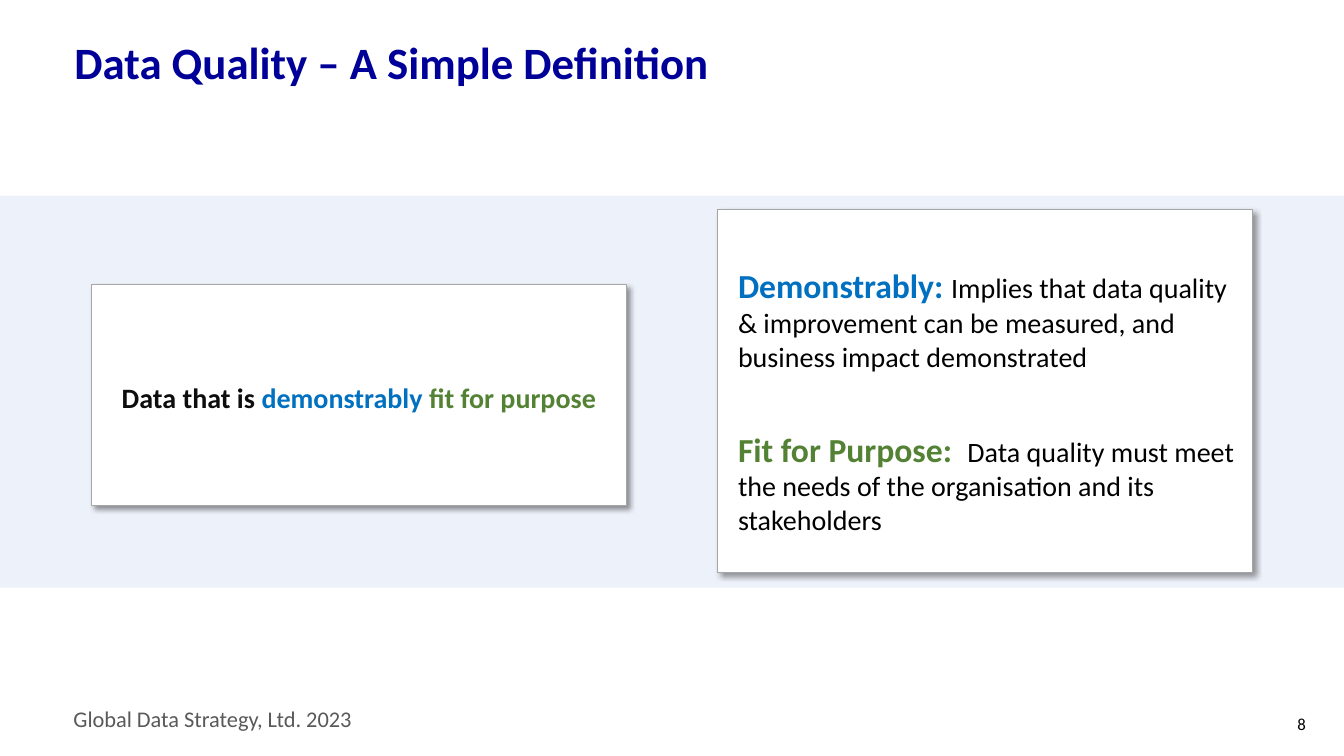
import lxml.etree
import pptx
import pptx.dml.color
import pptx.enum.shapes
import pptx.enum.text
import pptx.oxml.ns
import pptx.util

Inches = pptx.util.Inches
Pt = pptx.util.Pt
ALIGN = pptx.enum.text.PP_ALIGN
ANCHOR = pptx.enum.text.MSO_ANCHOR
RECTANGLE = pptx.enum.shapes.MSO_SHAPE.RECTANGLE
BLUE, GREEN, BLACK = "0070C0", "548235", "000000"


def rgb(color):
    return pptx.dml.color.RGBColor.from_string(color)


def add_runs(paragraph, runs):
    paragraph.font.name = "Calibri"
    for text, size, color, bold in runs:
        run = paragraph.add_run()
        run.text = text
        run.font.size = Pt(size)
        run.font.color.rgb = rgb(color)
        run.font.bold = bold


presentation = pptx.Presentation()
presentation.slide_width = Inches(13.33)
presentation.slide_height = Inches(7.5)
slide = presentation.slides.add_slide(presentation.slide_layouts[6])

# Background band
band = slide.shapes.add_shape(RECTANGLE, 0, Inches(1.94), Inches(13.33), Inches(3.89))
band.shadow.inherit = False
band.fill.solid()
band.fill.fore_color.rgb = rgb("EDF1F9")
band.line.fill.background()

# Footer, title and page number
labels = [
    ("Global Data Strategy, Ltd. 2023", 0.63, 6.95, 3.62, 0.37, 16, "595959", False, ALIGN.LEFT, ANCHOR.TOP, 1),
    ("Data Quality – A Simple Definition", 0.64, 0.3, 11.5, 0.68, 32, "000099", True, ALIGN.LEFT, ANCHOR.MIDDLE, 0.9),
    ("8", 12.27, 6.98, 0.78, 0.4, 12, BLACK, False, ALIGN.RIGHT, ANCHOR.MIDDLE, 1),
]
for text, left, top, width, height, size, color, bold, align, anchor, spacing in labels:
    label = slide.shapes.add_textbox(Inches(left), Inches(top), Inches(width), Inches(height))
    label.text_frame.word_wrap = True
    label.text_frame.vertical_anchor = anchor
    paragraph = label.text_frame.paragraphs[0]
    paragraph.alignment = align
    paragraph.line_spacing = spacing
    add_runs(paragraph, [(text, size, color, bold)])

# Definition card and explanation card
definition = [
    [("Data that is ", 20, "0D0D0D", True), ("demonstrably ", 20, BLUE, True), ("fit for purpose", 20, GREEN, True)],
]
explanation = [
    [
        ("Demonstrably: ", 24, BLUE, True),
        ("Implies that data quality & improvement can be measured, and business impact demonstrated", 20, BLACK, False),
    ],
    [
        ("Fit for Purpose:  ", 24, GREEN, True),
        ("Data quality must meet the needs of the organisation and its stakeholders", 20, BLACK, False),
    ],
]
cards = [
    (definition, 0.91, 2.82, 2.2, (0.1, 0.1, 0.1), ALIGN.CENTER, ANCHOR.MIDDLE),
    (explanation, 7.12, 2.08, 3.6, (0.2, 0.55, 0), ALIGN.LEFT, ANCHOR.TOP),
]
for paragraphs, left, top, height, margins, align, anchor in cards:
    card = slide.shapes.add_shape(RECTANGLE, Inches(left), Inches(top), Inches(5.3), Inches(height))
    card.fill.solid()
    card.fill.fore_color.rgb = rgb("FFFFFF")
    card.line.color.rgb = rgb("A6A6A6")
    card.line.width = Pt(0.75)

    # Soft shadow to the lower right
    card.shadow.inherit = False
    effects = card._element.spPr.find(pptx.oxml.ns.qn("a:effectLst"))
    shadow = lxml.etree.SubElement(
        effects, pptx.oxml.ns.qn("a:outerShdw"),
        blurRad=str(Pt(4)), dist=str(Pt(3)), dir=str(45 * 60000), algn="tl", rotWithShape="0")
    shadow_color = lxml.etree.SubElement(shadow, pptx.oxml.ns.qn("a:srgbClr"), val=BLACK)
    lxml.etree.SubElement(shadow_color, pptx.oxml.ns.qn("a:alpha"), val="40000")

    frame = card.text_frame
    frame.word_wrap = True
    frame.vertical_anchor = anchor
    frame.margin_left, frame.margin_top, frame.margin_right = map(Inches, margins)
    frame.margin_bottom = Inches(0.05)
    for index, runs in enumerate(paragraphs):
        paragraph = frame.add_paragraph() if index else frame.paragraphs[0]
        paragraph.alignment = align
        if index:
            paragraph.space_before = Pt(40)
        add_runs(paragraph, runs)

presentation.save("out.pptx")
